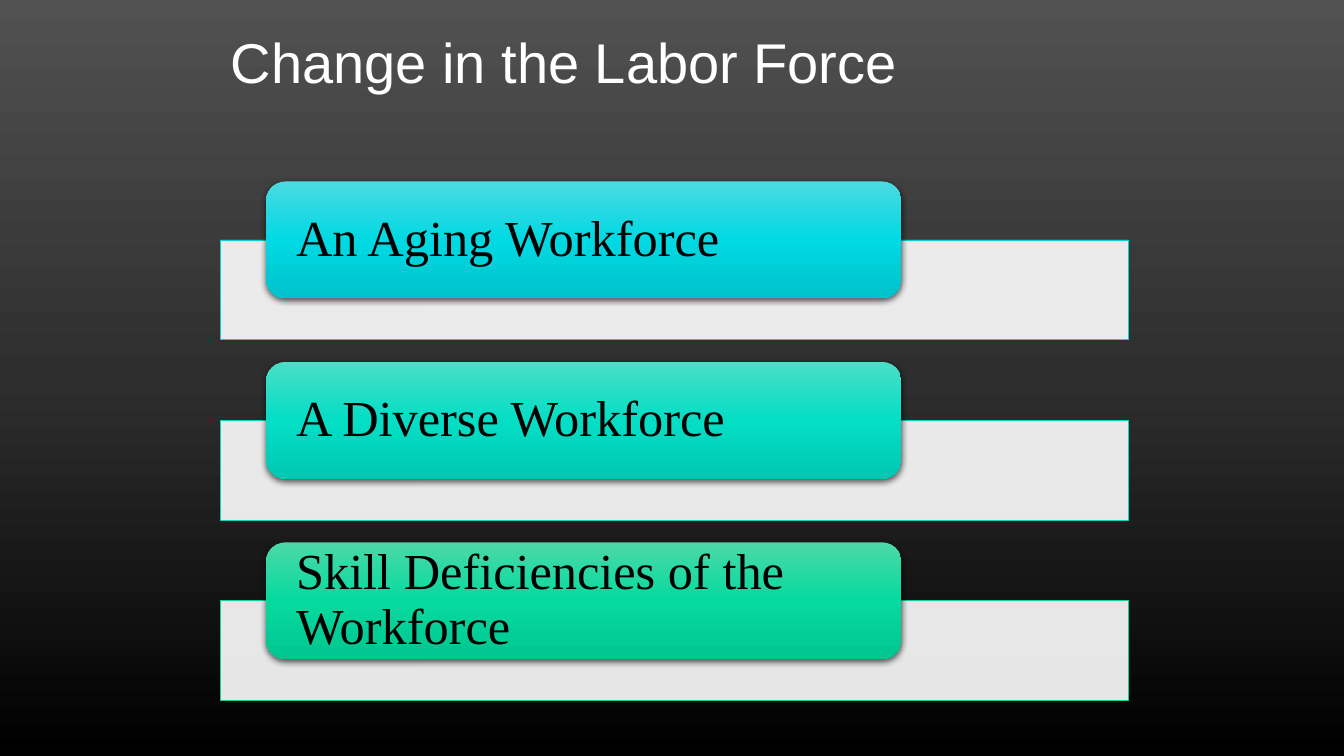
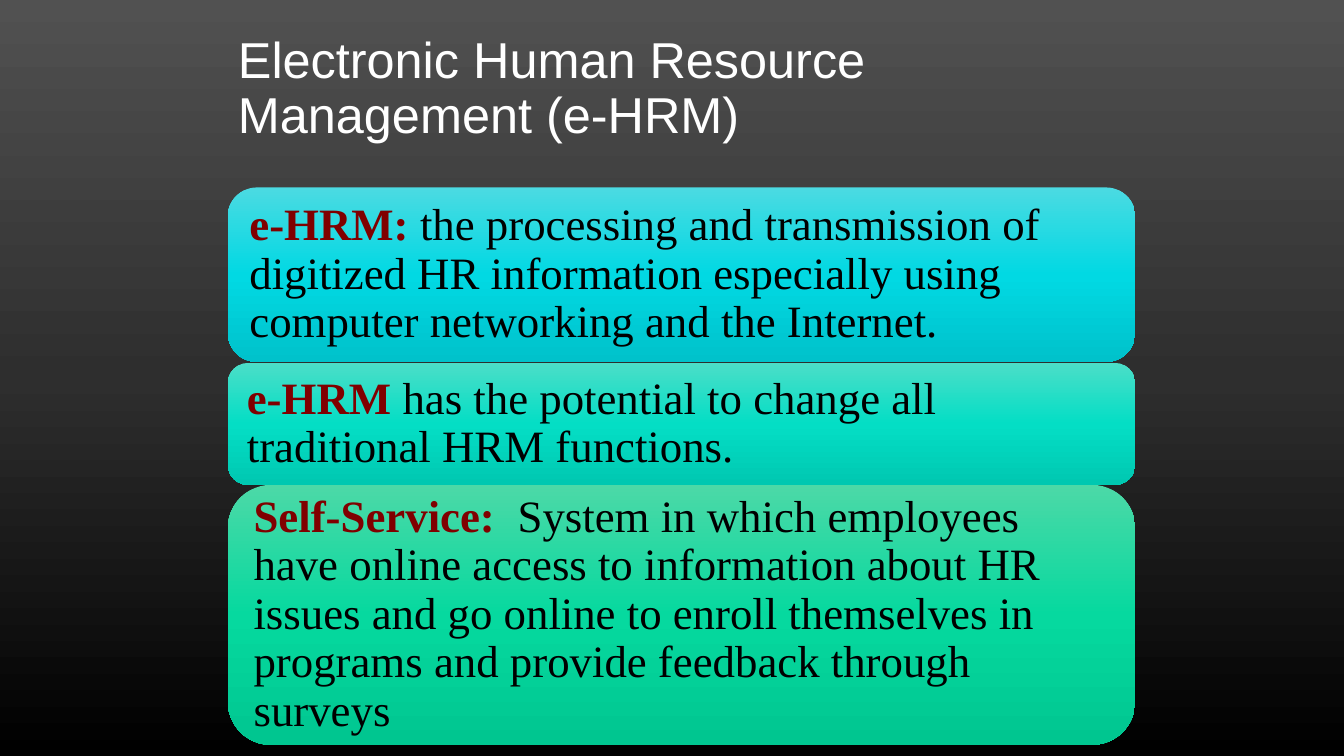
import copy

from lxml import etree
from pptx import Presentation
from pptx.dml.color import RGBColor
from pptx.enum import shapes, text
from pptx.oxml.ns import qn
from pptx.util import Inches, Pt

WHITE = RGBColor(0xFF, 0xFF, 0xFF)
BLACK = RGBColor(0x00, 0x00, 0x00)
MAROON = RGBColor(0x80, 0x00, 0x00)
CYAN = RGBColor(0x0B, 0xD0, 0xD9)
TURQUOISE = RGBColor(0x0E, 0xD4, 0xBD)
GREEN = RGBColor(0x10, 0xCF, 0x9B)
BACKDROP = (RGBColor(0x51, 0x51, 0x51), RGBColor(0x2E, 0x2E, 0x2E), BLACK)
CYAN_SHADES = (RGBColor(0x4B, 0xDA, 0xE2), RGBColor(0x01, 0xD9, 0xE3), RGBColor(0x00, 0xC2, 0xCB))
TURQUOISE_SHADES = (RGBColor(0x4B, 0xDE, 0xC8), RGBColor(0x04, 0xDE, 0xC5), RGBColor(0x00, 0xC8, 0xB1))
GREEN_SHADES = (RGBColor(0x4C, 0xD9, 0xA7), RGBColor(0x06, 0xD9, 0x9F), RGBColor(0x00, 0xC6, 0x90))

TITLE_FONT = "Arial"
BODY_FONT = "Times New Roman"
LINE_SPACING = 0.9
CONTENT_WIDTH = 9

FORCES = [
    ("An Aging Workforce", CYAN, CYAN_SHADES),
    ("A Diverse Workforce", TURQUOISE, TURQUOISE_SHADES),
    ("Skill Deficiencies of the Workforce", GREEN, GREEN_SHADES),
]
# top, height, term, description, shades
DEFINITIONS = [
    (1.86, 1.73, "e-HRM: ",
     "the processing and transmission of digitized HR information especially "
     "using computer networking and the Internet.", CYAN_SHADES),
    (3.6, 1.21, "e-HRM ",
     "has the potential to change all traditional HRM functions.", TURQUOISE_SHADES),
    (4.81, 2.58, "Self-Service:  ",
     "System in which employees have online access to information about HR "
     "issues and go online to enroll themselves in programs and provide "
     "feedback through surveys", GREEN_SHADES),
]


def shade(fill, element, colors):
    """Fill from top to bottom with three evenly spaced colours."""
    fill.gradient()
    fill.gradient_angle = 270
    stop_list = element.find(".//" + qn("a:gsLst"))
    stop_list.insert(1, copy.deepcopy(stop_list[0]))
    for stop, position, color in zip(fill.gradient_stops, (0, 0.5, 1), colors):
        stop.position = position
        stop.color.rgb = color


def add_drop_shadow(shape):
    effects = shape.element.spPr.find(qn("a:effectLst"))
    shadow = etree.SubElement(effects, qn("a:outerShdw"), blurRad=str(Pt(4.5)),
                              dist=str(Pt(1.5)), dir="5400000", rotWithShape="0")
    color = etree.SubElement(shadow, qn("a:srgbClr"), val=str(BLACK))
    etree.SubElement(color, qn("a:alpha"), val="63000")


def add_page(deck, title, left, size):
    page = deck.slides.add_slide(deck.slide_layouts[5])
    box = page.shapes.title
    box.left, box.top = Inches(left), Inches(0.3)
    box.width, box.height = Inches(CONTENT_WIDTH), Inches(1.25)
    frame = box.text_frame
    frame.text = title
    frame.word_wrap = True
    frame.auto_size = text.MSO_AUTO_SIZE.NONE
    frame.vertical_anchor = text.MSO_ANCHOR.TOP
    para = frame.paragraphs[0]
    para.alignment = text.PP_ALIGN.LEFT
    para.line_spacing = LINE_SPACING
    para.font.name, para.font.size = TITLE_FONT, Pt(size)
    para.font.color.rgb = WHITE
    return page


def add_card(page, left, top, width, height, shades, size, margins):
    """Add a rounded, shaded card; return it with its empty paragraph."""
    card = page.shapes.add_shape(shapes.MSO_SHAPE.ROUNDED_RECTANGLE, Inches(left),
                                 Inches(top), Inches(width), Inches(height))
    card.shadow.inherit = False
    card.line.fill.background()
    shade(card.fill, card.element, shades)
    frame = card.text_frame
    frame.word_wrap = True
    frame.vertical_anchor = text.MSO_ANCHOR.MIDDLE
    side, end = margins
    frame.margin_left = frame.margin_right = Inches(side)
    frame.margin_top = frame.margin_bottom = Inches(end)
    para = frame.paragraphs[0]
    para.alignment = text.PP_ALIGN.LEFT
    para.line_spacing = LINE_SPACING
    para.font.name, para.font.size = BODY_FONT, Pt(size)
    para.font.color.rgb = BLACK
    return card, para


def add_force(page, left, top, label, accent, shades):
    """Add a labelled card that overlaps a pale bar."""
    bar = page.shapes.add_shape(shapes.MSO_SHAPE.RECTANGLE, Inches(left),
                                Inches(top + 0.58), Inches(CONTENT_WIDTH), Inches(0.99))
    bar.shadow.inherit = False
    bar.fill.solid()
    bar.fill.fore_color.rgb = WHITE
    color = bar.element.spPr.find(qn("a:solidFill"))[0]
    etree.SubElement(color, qn("a:alpha"), val="90000")
    bar.line.color.rgb = accent
    bar.line.width = Pt(0.5)

    card, para = add_card(page, left + 0.45, top, 6.3, 1.16, shades, 36, (0.24, 0))
    add_drop_shadow(card)
    para.add_run().text = label


def add_definition(page, left, top, height, term, description, shades):
    _, para = add_card(page, left, top, CONTENT_WIDTH, height, shades, 32, (0.13, 0.13))
    span = para.add_run()
    span.text = term
    span.font.bold = True
    span.font.color.rgb = MAROON
    para.add_run().text = description


def build_labor_force(deck):
    left = 2.19
    page = add_page(deck, "Change in the Labor Force", left, 40)
    for row, force in enumerate(FORCES):
        add_force(page, left, 1.8 + row * 1.79, *force)


def build_e_hrm(deck):
    left = 2.26
    page = add_page(deck, "Electronic Human Resource Management (e-HRM)", left, 36)
    for definition in DEFINITIONS:
        add_definition(page, left, *definition)


def main():
    deck = Presentation()
    deck.slide_width, deck.slide_height = Inches(13.33), Inches(7.5)
    master = deck.slide_master
    shade(master.background.fill, master.element, BACKDROP)
    build_labor_force(deck)
    build_e_hrm(deck)
    deck.save("out.pptx")


if __name__ == "__main__":
    main()
